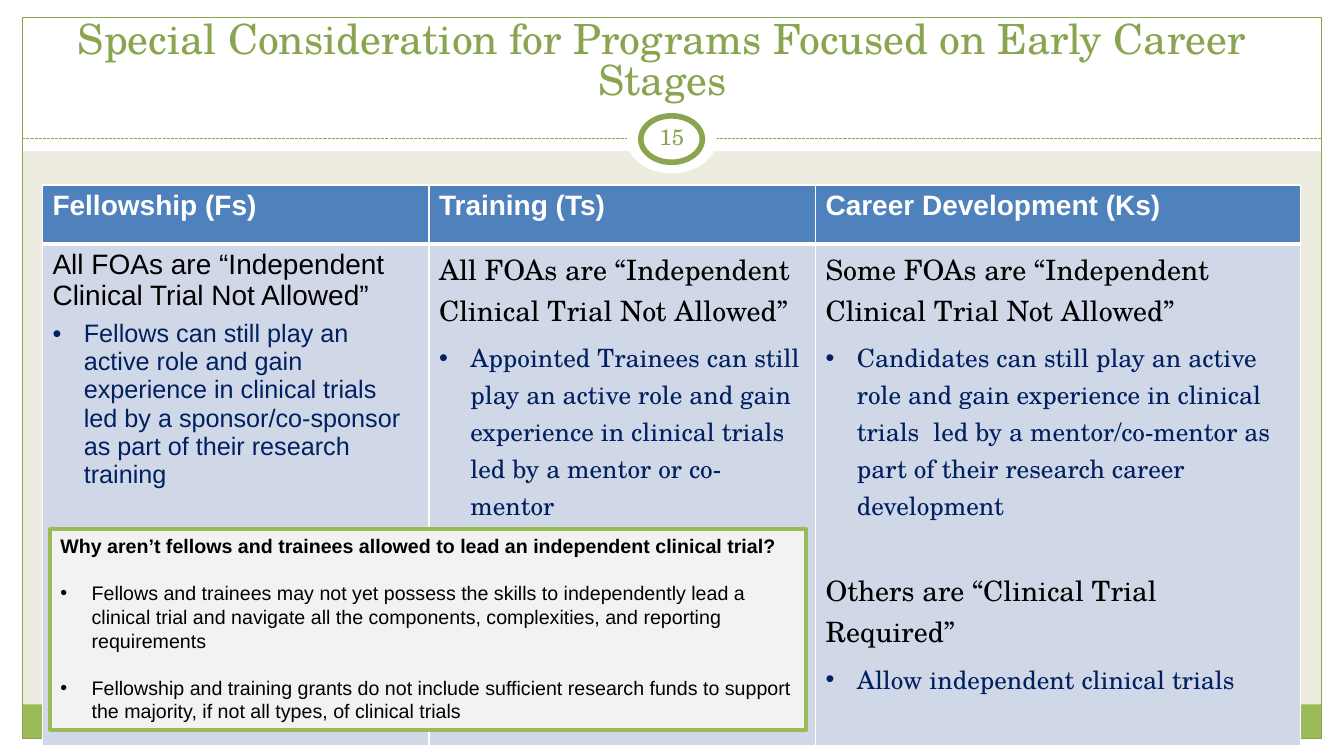
from pptx import Presentation
from pptx.dml.color import RGBColor
from pptx.enum.dml import MSO_LINE
from pptx.enum.shapes import MSO_CONNECTOR, MSO_SHAPE
from pptx.enum.text import MSO_ANCHOR, PP_ALIGN
from pptx.oxml import parse_xml
from pptx.oxml.ns import nsdecls
from pptx.util import Cm, Pt

COLORS = {"white": "FFFFFF", "sand": "EEECE1", "green": "9BBB59", "olive": "89A54F",
          "head": "4F81BD", "cell": "D0D8E8", "navy": "002060", "black": "000000",
          "grey": "F2F2F2"}
SERIF, SANS = "TeX Gyre Schola", "Arial"
W, H = 33.87, 19.05
EDGE = 0.56

TITLE = "Special Consideration for Programs Focused on Early Career Stages"
NUMBER = "15"
COLUMNS = [
    ("Fellowship (Fs)", 9.74, SANS, [
        ("All FOAs are “Independent Clinical Trial Not Allowed”",
         "Fellows can still play an active role and gain experience in clinical trials  "
         "led by a sponsor/co-sponsor as part of their research training")]),
    ("Training (Ts)", 9.74, SERIF, [
        ("All FOAs are “Independent Clinical Trial Not Allowed”",
         "Appointed Trainees can still play an active role and gain experience in "
         "clinical trials  led by a mentor or co-mentor")]),
    ("Career Development (Ks)", 12.22, SERIF, [
        ("Some FOAs are “Independent Clinical Trial Not Allowed”",
         "Candidates can still play an active role and gain experience in clinical "
         "trials  led by a mentor/co-mentor as part of their research career development"),
        ("Others are “Clinical Trial Required”",
         "Allow independent clinical trials")]),
]
QUESTION = "Why aren’t fellows and trainees allowed to lead an independent clinical trial?"
REASONS = [
    "Fellows and trainees may not yet possess the skills to independently lead a clinical "
    "trial and navigate all the components, complexities, and reporting requirements",
    "Fellowship and training grants do not include sufficient research funds to support "
    "the majority, if not all types, of clinical trials",
]
BANDS = [
    (0, H - 0.43, W, 0.43, "white"),
    (0, 0, W, 3.81, "white"),
    (0, 0, EDGE, H, "white"),
    (W - EDGE, 0, EDGE, H, "white"),
    (EDGE, 17.75, W - 2 * EDGE, 0.87, "green"),
]


def rgb(name):
    return RGBColor.from_string(COLORS[name])


def add_box(kind, x, y, w, h, fill=None, line=None, width=0.75):
    sp = slide.shapes.add_shape(kind, Cm(x), Cm(y), Cm(w), Cm(h))
    sp.shadow.inherit = False
    if fill:
        sp.fill.solid()
        sp.fill.fore_color.rgb = rgb(fill)
    else:
        sp.fill.background()
    if line:
        sp.line.color.rgb = rgb(line)
        sp.line.width = Pt(width)
    else:
        sp.line.fill.background()
    return sp


def write(tf, i, text, size, font, color, bold=False, bullet=False, **layout):
    p = tf.paragraphs[0] if i == 0 else tf.add_paragraph()
    r = p.add_run()
    r.text = text
    if bullet:
        pPr = p._p.get_or_add_pPr()
        pPr.set("marL", str(Cm(0.79)))
        pPr.set("indent", str(-Cm(0.79)))
        pPr.append(parse_xml(f'<a:buFont {nsdecls("a")} typeface="Arial"/>'))
        pPr.append(parse_xml(f'<a:buChar {nsdecls("a")} char="•"/>'))
    for key, value in {"alignment": PP_ALIGN.LEFT, **layout}.items():
        setattr(p, key, value)
    for key, value in {"size": Pt(size), "name": font, "bold": bold}.items():
        setattr(r.font, key, value)
    r.font.color.rgb = rgb(color)


def paint_cell(cell, fill, top, bottom):
    cell.fill.solid()
    cell.fill.fore_color.rgb = rgb(fill)
    tcPr = cell._tc.get_or_add_tcPr()
    for i, (side, width) in enumerate({"L": 1, "R": 1, "T": top, "B": bottom}.items()):
        tcPr.insert(i, parse_xml(
            f'<a:ln{side} {nsdecls("a")} w="{Pt(width)}"><a:solidFill>'
            f'<a:srgbClr val="{COLORS["white"]}"/></a:solidFill></a:ln{side}>'))


prs = Presentation()
prs.slide_width, prs.slide_height = Cm(W), Cm(H)
slide = prs.slides.add_slide(prs.slide_layouts[5])
slide.background.fill.solid()
slide.background.fill.fore_color.rgb = rgb("sand")

for x, y, w, h, color in BANDS:
    add_box(MSO_SHAPE.RECTANGLE, x, y, w, h, color)
add_box(MSO_SHAPE.RECTANGLE, EDGE, 0.43, W - 2 * EDGE, 18.19, line="olive")
rule = slide.shapes.add_connector(MSO_CONNECTOR.STRAIGHT, Cm(EDGE), Cm(3.49), Cm(W - EDGE), Cm(3.49))
rule.line.color.rgb = rgb("olive")
rule.line.width = Pt(0.75)
rule.line.dash_style = MSO_LINE.SQUARE_DOT
rule._element.spPr.append(parse_xml(f'<a:effectLst {nsdecls("a")}/>'))
add_box(MSO_SHAPE.OVAL, 15.8, 2.67, 2.26, 1.7, "white")
add_box(MSO_SHAPE.OVAL, 16.15, 2.92, 1.55, 1.17, "white", "olive", 4)

title = slide.shapes.title
title.left, title.top, title.width, title.height = Cm(0.64), Cm(0.64), Cm(32.11), Cm(2.11)
title.text_frame.vertical_anchor = MSO_ANCHOR.BOTTOM
write(title.text_frame, 0, TITLE, 29.7, SERIF, "olive", alignment=PP_ALIGN.CENTER, line_spacing=0.82)
slide.shapes._spTree.append(title._element)

number = slide.shapes.add_textbox(Cm(16.08), Cm(2.84), Cm(1.7), Cm(1.22))
tf = number.text_frame
for key, value in {"word_wrap": True, "vertical_anchor": MSO_ANCHOR.MIDDLE,
                   "margin_left": Cm(0.13), "margin_right": Cm(0.13)}.items():
    setattr(tf, key, value)
write(tf, 0, NUMBER, 16, SERIF, "olive", alignment=PP_ALIGN.CENTER)

heights = (1.48, 12.66)
table = slide.shapes.add_table(2, len(COLUMNS), Cm(1.07), Cm(4.66),
                               Cm(sum(c[1] for c in COLUMNS)), Cm(sum(heights))).table
for row, height in zip(table.rows, heights):
    row.height = Cm(height)
for col, (heading, width, font, groups) in enumerate(COLUMNS):
    table.columns[col].width = Cm(width)
    head, body = table.cell(0, col), table.cell(1, col)
    paint_cell(head, "head", 1, 3)
    paint_cell(body, "cell", 3, 1)
    write(head.text_frame, 0, heading, 20, SANS, "white", bold=True)
    for n, (rule_text, note) in enumerate(groups):
        gap = {"space_before": Pt(26.4)} if n else {}
        write(body.text_frame, 2 * n, rule_text, 20, font, "black", space_after=Pt(6), **gap)
        write(body.text_frame, 2 * n + 1, note, 18, font, "navy", bullet=True, space_after=Pt(6))

callout = add_box(MSO_SHAPE.RECTANGLE, 1.27, 13.34, 19.05, 5.05, "grey", "green", 3)
tf = callout.text_frame
tf.word_wrap = True
tf.vertical_anchor = MSO_ANCHOR.TOP
write(tf, 0, QUESTION, 14, SANS, "black", bold=True, line_spacing=Pt(16.8))
for i, reason in enumerate(REASONS, 1):
    write(tf, i, reason, 14, SANS, "black", bullet=True,
          line_spacing=Pt(16.8), space_before=Pt(16.8))

prs.save("out.pptx")
